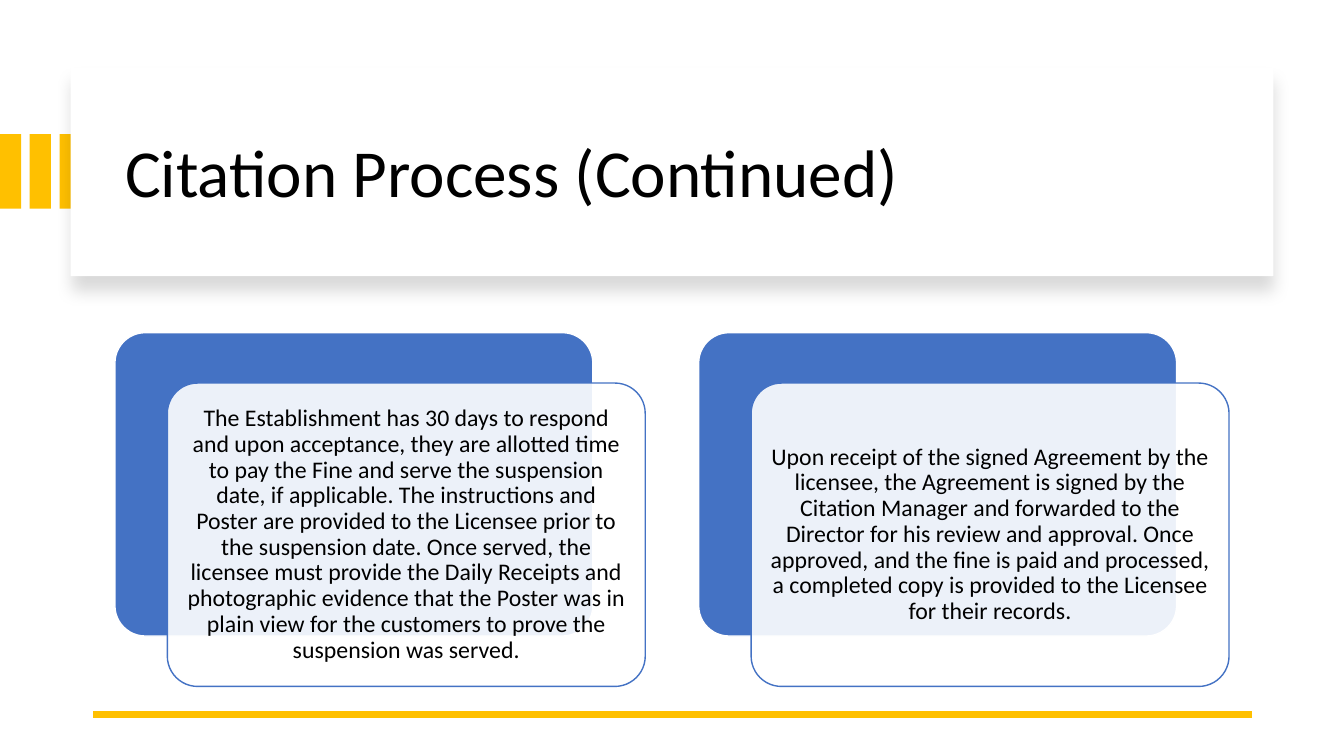
from dataclasses import dataclass

from lxml import etree
from pptx import Presentation
from pptx.dml.color import RGBColor
from pptx.enum.shapes import MSO_CONNECTOR as Connector, MSO_SHAPE as Shape
from pptx.enum.text import MSO_ANCHOR as Anchor, MSO_AUTO_SIZE as AutoSize, PP_ALIGN as Align
from pptx.oxml import parse_xml
from pptx.oxml.ns import nsdecls, qn
from pptx.util import Inches, Pt


@dataclass(frozen=True)
class Theme:
    gold: RGBColor = RGBColor.from_string("FFC000")
    blue: RGBColor = RGBColor.from_string("4472C4")
    white: RGBColor = RGBColor.from_string("FFFFFF")
    black: RGBColor = RGBColor.from_string("000000")
    font: str = "Calibri"
    title_size: Pt = Pt(48)
    body_size: Pt = Pt(17)


theme = Theme()
deck = Presentation()
deck.slide_width, deck.slide_height = Inches(13.33), Inches(7.5)
page = deck.slides.add_slide(deck.slide_layouts[5])


def add_block(kind, left, top, width, height, fill, line=None):
    block = page.shapes.add_shape(kind, Inches(left), Inches(top), Inches(width), Inches(height))
    block.shadow.inherit = False
    block.fill.solid()
    block.fill.fore_color.rgb = fill
    if line is None:
        block.line.fill.background()
    else:
        block.line.color.rgb = line
        block.line.width = Pt(1)
        block.adjustments[0] = 0.1
    return block


def write(frame, text, size, align):
    frame.word_wrap = True
    frame.auto_size = AutoSize.NONE
    frame.vertical_anchor = Anchor.MIDDLE
    para = frame.paragraphs[0]
    para.alignment = align
    para.line_spacing = 0.9
    span = para.add_run()
    span.text = text
    span.font.name = theme.font
    span.font.size = size
    span.font.color.rgb = theme.black


# Gold bars at the left edge
for index in range(3):
    add_block(Shape.RECTANGLE, index * 0.295, 1.33, 0.21, 0.74, theme.gold)

# Title banner with a soft shadow below it
banner = add_block(Shape.RECTANGLE, 0.7, 0.67, 11.93, 2.07, theme.white)
effects = banner.element.spPr.find(qn("a:effectLst"))
effects.append(parse_xml(
    f'<a:outerShdw {nsdecls("a")} blurRad="{Pt(11)}" dist="{Pt(10)}" dir="5400000" '
    'algn="t" rotWithShape="0"><a:srgbClr val="000000"><a:alpha val="15000"/></a:srgbClr>'
    '</a:outerShdw>'))

# Title, brought in front of the banner
title = page.shapes.title
title.left, title.top = Inches(1.14), Inches(0.89)
title.width, title.height = Inches(11.13), Inches(1.7)
write(title.text_frame, "Citation Process (Continued)", theme.title_size, Align.LEFT)
banner.element.addnext(title.element)

# Gold rule along the bottom
rule = page.shapes.add_connector(
    Connector.STRAIGHT, Inches(12.42), Inches(7.09), Inches(0.92), Inches(7.09))
rule.line.color.rgb = theme.gold
rule.line.width = Pt(4.5)
etree.SubElement(rule.element.spPr, qn("a:effectLst"))

# Two steps: a blue card, a translucent card offset from it, and the text
steps = [
    "The Establishment has 30 days to respond and upon acceptance, they are allotted time "
    "to pay the Fine and serve the suspension date, if applicable. The instructions and "
    "Poster are provided to the Licensee prior to the suspension date. Once served, the "
    "licensee must provide the Daily Receipts and photographic evidence that the Poster was "
    "in plain view for the customers to prove the suspension was served.",
    "Upon receipt of the signed Agreement by the licensee, the Agreement is signed by the "
    "Citation Manager and forwarded to the Director for his review and approval. Once "
    "approved, and the fine is paid and processed, a completed copy is provided to the "
    "Licensee for their records.",
]
for index, step in enumerate(steps):
    left = 1.14 + index * 5.79
    add_block(Shape.ROUNDED_RECTANGLE, left, 3.3, 4.74, 3.01, theme.blue, theme.white)
    card = add_block(Shape.ROUNDED_RECTANGLE, left + 0.52, 3.8, 4.74, 3.01, theme.white, theme.blue)
    color = card.element.spPr.find(qn("a:solidFill")).find(qn("a:srgbClr"))
    etree.SubElement(color, qn("a:alpha"), val="90000")

    box = page.shapes.add_textbox(Inches(left + 0.61), Inches(3.89), Inches(4.56), Inches(2.83))
    frame = box.text_frame
    frame.margin_left = frame.margin_right = Inches(0.07)
    frame.margin_top = frame.margin_bottom = Inches(0.07)
    write(frame, step, theme.body_size, Align.CENTER)
    frame.paragraphs[0].space_after = Pt(6)

deck.save("out.pptx")
